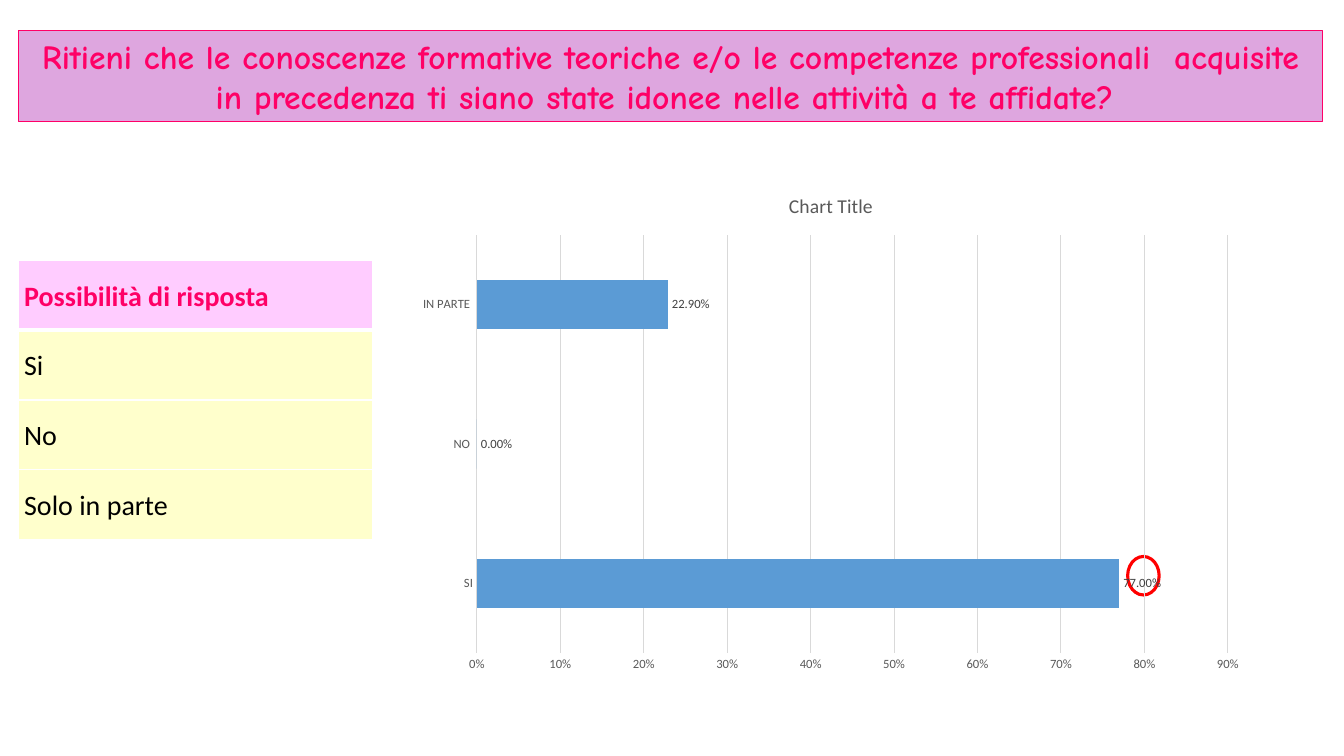
from lxml import etree
from pptx import Presentation
from pptx.chart.data import CategoryChartData
from pptx.dml.color import RGBColor
from pptx.enum.chart import XL_CHART_TYPE, XL_LABEL_POSITION, XL_TICK_MARK
from pptx.enum.shapes import MSO_SHAPE
from pptx.enum.text import MSO_ANCHOR, PP_ALIGN
from pptx.oxml.ns import qn
from pptx.util import Pt

RECTANGLE = MSO_SHAPE.RECTANGLE
OVAL = MSO_SHAPE.OVAL
CENTER = PP_ALIGN.CENTER
MIDDLE = MSO_ANCHOR.MIDDLE
BAR_CLUSTERED = XL_CHART_TYPE.BAR_CLUSTERED
OUTSIDE_END = XL_LABEL_POSITION.OUTSIDE_END
NO_TICK = XL_TICK_MARK.NONE

PINK = "FF0066"
GREY_TEXT = "595959"
GREY_LINE = "D9D9D9"
BODY_FONT = "Calibri"

QUESTION = (
    "Ritieni che le conoscenze formative teoriche e/o le competenze professionali  "
    "acquisite in precedenza ti siano state idonee nelle attività a te affidate? "
)
ANSWERS = ["Possibilità di risposta", "Si", "No", "Solo in parte"]
SHARES = {"SI": 0.77, "NO ": 0, "IN PARTE ": 0.229}


def rgb(value):
    return RGBColor.from_string(value)


def set_font(font, size, color, name=BODY_FONT, bold=False):
    font.size = Pt(size)
    font.name = name
    font.bold = bold
    font.color.rgb = rgb(color)


def set_line(line, color, width):
    line.color.rgb = rgb(color)
    line.width = Pt(width)


def add_outlined(slide, preset, box, color, width, fill=None):
    shape = slide.shapes.add_shape(preset, *map(Pt, box))
    shape.shadow.inherit = False
    if fill:
        shape.fill.solid()
        shape.fill.fore_color.rgb = rgb(fill)
    else:
        shape.fill.background()
    set_line(shape.line, color, width)
    return shape


def add_question(slide):
    banner = add_outlined(slide, RECTANGLE, (13.5, 21.6, 931, 65.4), PINK, 0.75, "DEA6DF")
    frame = banner.text_frame
    frame.word_wrap = True
    frame.text = QUESTION
    paragraph = frame.paragraphs[0]
    paragraph.alignment = CENTER
    set_font(paragraph.font, 24, PINK, "Comic Neue", True)


def add_borders(cell, top, bottom):
    """Draw white cell borders; must run before the cell gets its fill."""
    properties = cell._tc.get_or_add_tcPr()
    for side, width in (("L", 1), ("R", 1), ("T", top), ("B", bottom)):
        border = etree.SubElement(properties, qn(f"a:ln{side}"), w=str(Pt(width)))
        solid = etree.SubElement(border, qn("a:solidFill"))
        etree.SubElement(solid, qn("a:srgbClr"), val="FFFFFF")


def add_answers(slide):
    box = map(Pt, (13.5, 186, 253, 199.4))
    table = slide.shapes.add_table(len(ANSWERS), 1, *box).table
    for row, answer in enumerate(ANSWERS):
        header = row == 0
        cell = table.cell(row, 0)
        add_borders(cell, top=3 if row == 1 else 1, bottom=3 if header else 1)
        cell.fill.solid()
        cell.fill.fore_color.rgb = rgb("FFCCFF" if header else "FFFFCC")
        cell.vertical_anchor = MIDDLE
        cell.margin_left = cell.margin_right = Pt(3.75)
        cell.margin_top = cell.margin_bottom = Pt(3.75)
        cell.text = answer
        paragraph = cell.text_frame.paragraphs[0]
        paragraph.line_spacing = 1.07
        paragraph.space_after = Pt(8)
        set_font(paragraph.font, 20, PINK if header else "000000", bold=header)


def clear_backgrounds(chart):
    """Make chart and plot area transparent, so the ring behind them shows."""
    area = chart.element.find(qn("c:chart"))
    chart_style = etree.Element(qn("c:spPr"))
    area.addnext(chart_style)
    plot_style = etree.SubElement(area.find(qn("c:plotArea")), qn("c:spPr"))
    for style in (chart_style, plot_style):
        etree.SubElement(style, qn("a:noFill"))
    outline = etree.SubElement(chart_style, qn("a:ln"))
    etree.SubElement(outline, qn("a:noFill"))


def style_axis(axis):
    axis.major_tick_mark = axis.minor_tick_mark = NO_TICK
    set_font(axis.tick_labels.font, 9, GREY_TEXT)


def add_shares(slide):
    data = CategoryChartData(number_format="0.00%")
    data.categories = SHARES.keys()
    data.add_series("Series 1", SHARES.values())
    box = map(Pt, (290, 124, 607, 363))
    chart = slide.shapes.add_chart(BAR_CLUSTERED, *box, data).chart
    set_font(chart.font, 10, "000000")
    clear_backgrounds(chart)
    chart.has_legend = False
    title = chart.chart_title.text_frame
    title.text = "Chart Title"
    set_font(title.paragraphs[0].font, 14, GREY_TEXT)

    answers, percent = chart.category_axis, chart.value_axis
    style_axis(answers)
    set_line(answers.format.line, GREY_LINE, 0.75)
    style_axis(percent)
    percent.format.line.fill.background()
    set_line(percent.major_gridlines.format.line, GREY_LINE, 0.75)
    percent.minimum_scale, percent.maximum_scale, percent.major_unit = 0, 0.9, 0.1
    percent.tick_labels.number_format = "0%"
    percent.tick_labels.number_format_is_linked = False

    plot = chart.plots[0]
    plot.gap_width = 182
    plot.vary_by_categories = False
    bars = plot.series[0]
    bars.format.fill.solid()
    bars.format.fill.fore_color.rgb = rgb("5B9BD5")
    labels = bars.data_labels
    labels.show_value = True
    labels.position = OUTSIDE_END
    labels.number_format = "0.00%"
    labels.number_format_is_linked = False
    set_font(labels.font, 9, "404040")


def main():
    deck = Presentation()
    deck.slide_width, deck.slide_height = Pt(960), Pt(540)
    slide = deck.slides.add_slide(deck.slide_layouts[6])
    add_question(slide)
    add_answers(slide)
    add_outlined(slide, OVAL, (805.5, 397.5, 22.5, 27.5), "FF0000", 2.25)
    add_shares(slide)
    deck.save("out.pptx")


if __name__ == "__main__":
    main()
